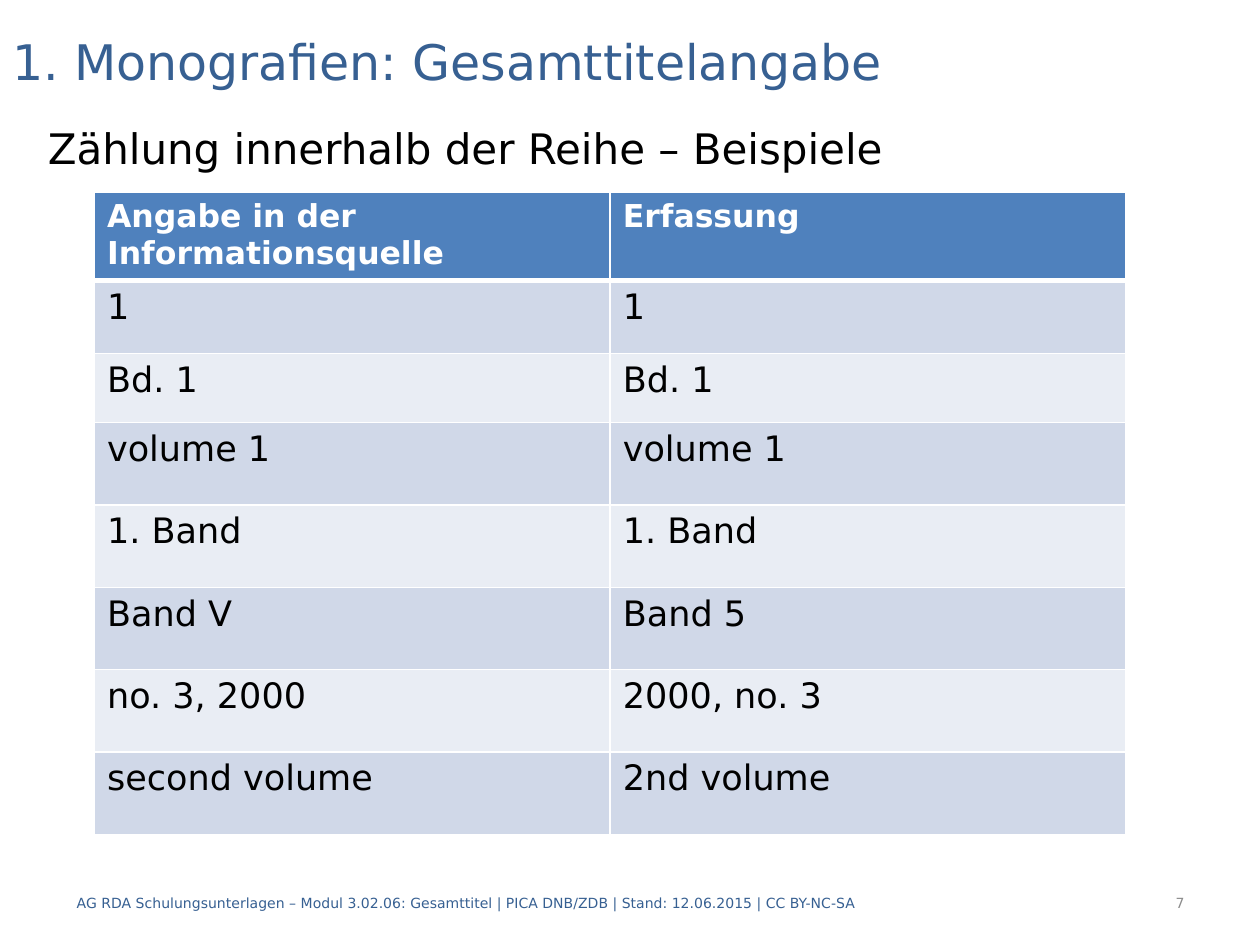
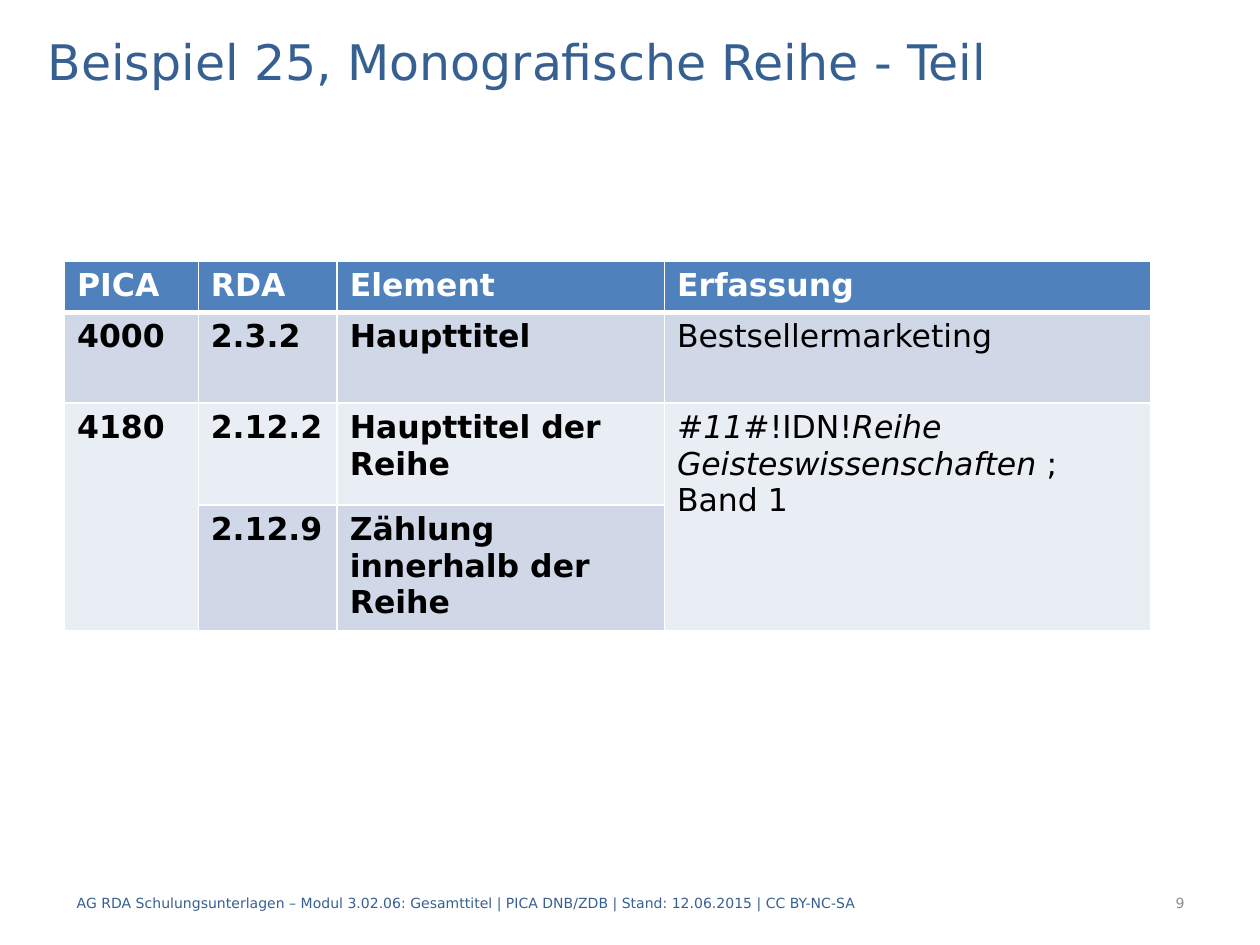
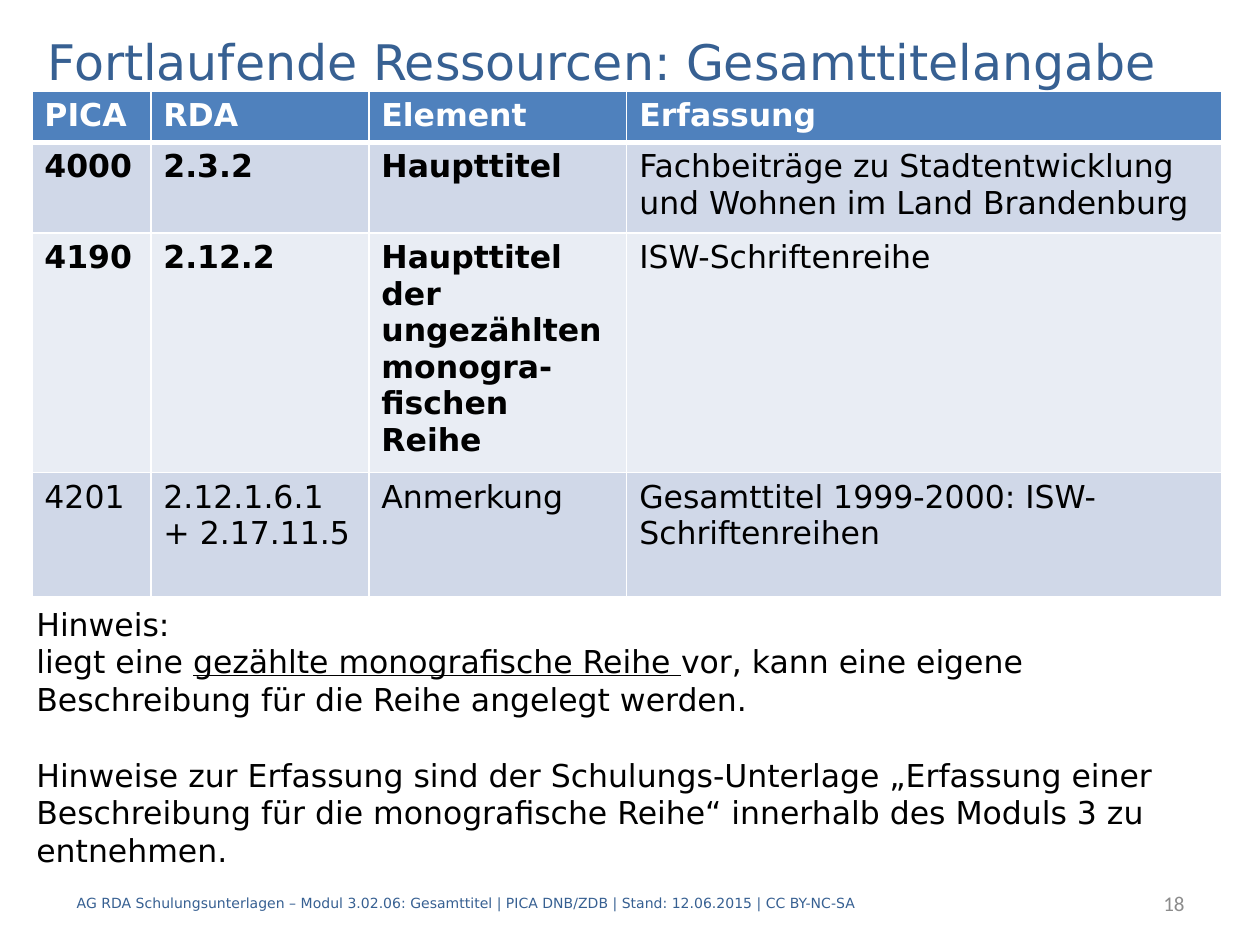
from lxml import etree
from pptx import Presentation
from pptx.dml.color import RGBColor
from pptx.enum import text as txt
from pptx.oxml import ns
from pptx.util import Pt

# Shared look
FONT = "DejaVu Sans"
NAVY = RGBColor(0x37, 0x60, 0x92)
BLUE = RGBColor(0x4F, 0x81, 0xBD)
BANDS = RGBColor(0xD0, 0xD8, 0xE8), RGBColor(0xE9, 0xED, 0xF4)
GRAY = RGBColor(0x8C, 0x8C, 0x8C)
BLACK = RGBColor(0, 0, 0)
WHITE = RGBColor(255, 255, 255)
MID = txt.MSO_ANCHOR.MIDDLE
RIGHT = txt.PP_ALIGN.RIGHT
FOOTER = ("AG RDA Schulungsunterlagen – Modul 3.02.06: Gesamttitel | "
          "PICA DNB/ZDB | Stand: 12.06.2015 | CC BY-NC-SA")

# Content: a text is a string or a list of paragraphs, a paragraph is a list
# of runs, a run is a string or (string, style letter).
# A table row is (number of bold cells, cells); None continues the cell above.
HEAD = (4, ["PICA", "RDA", "Element", "Erfassung"])
SERIES = [["#", ("11", "i"), "#!IDN!", ("Reihe Geisteswissenschaften ", "i"), ";"],
          ["Band 1"]]
NOTE = [
    ["Hinweis:"],
    ["liegt eine ", ("gezählte monografische Reihe ", "u"),
     "vor, kann eine eigene Beschreibung für die Reihe angelegt werden."],
    ["Hinweise zur Erfassung sind der Schulungs-Unterlage „Erfassung einer "
     "Beschreibung für die monografische Reihe“ innerhalb des Moduls 3 zu "
     "entnehmen."],
]
SLIDES = [
    dict(title="1. Monografien: Gesamttitelangabe", left=0, num="7",
         body="Zählung innerhalb der Reihe – Beispiele",
         at=(54, 110), cols=[294.7] * 2, size=20,
         highs=[47, 41.5, 39.5] + [47.1] * 5,
         rows=[(2, ["Angabe in der Informationsquelle", "Erfassung"]),
               (0, ["1", "1"]),
               (0, ["Bd. 1", "Bd. 1"]),
               (0, ["volume 1", "volume 1"]),
               (0, ["1. Band", "1. Band"]),
               (0, ["Band V", "Band 5"]),
               (0, ["no. 3, 2000", "2000, no. 3"]),
               (0, ["second volume", "2nd volume"])]),
    dict(title="Beispiel 25, Monografische Reihe - Teil", num="9",
         at=(36.9, 149.3), cols=[76.4, 79.4, 187, 277.7],
         highs=[29.2, 51.8, 58.3, 69.8],
         rows=[HEAD,
               (3, ["4000", "2.3.2", "Haupttitel", "Bestsellermarketing"]),
               (3, ["4180", "2.12.2", "Haupttitel der Reihe", SERIES]),
               (3, [None, "2.12.9", "Zählung innerhalb der Reihe", None])]),
    dict(title="Fortlaufende Ressourcen: Gesamttitelangabe", num="18",
         form=dict(size=12, font="Calibri"), note=NOTE,
         at=(18.2, 52.2), cols=[68, 124.6, 147.4, 340],
         highs=[29.2, 51.8, 132.4, 70.8],
         rows=[HEAD,
               (3, ["4000", "2.3.2", "Haupttitel",
                    "Fachbeiträge zu Stadtentwicklung und Wohnen im Land Brandenburg"]),
               (3, ["4190", "2.12.2",
                    "Haupttitel der ungezählten monogra-fischen Reihe",
                    "ISW-Schriftenreihe"]),
               (0, ["4201", "2.12.1.6.1 + 2.17.11.5", "Anmerkung",
                    "Gesamttitel 1999-2000: ISW-Schriftenreihen"])]),
]


def write(frame, words, size=18, color=BLACK, font=FONT, bold=False, align=None):
    """Fill a text frame and return its paragraphs."""
    frame.word_wrap = True
    paras = [[words]] if isinstance(words, str) else words
    for n, runs in enumerate(paras):
        para = frame.add_paragraph() if n else frame.paragraphs[0]
        para.alignment = align
        for part in runs:
            word, style = (part, "") if isinstance(part, str) else part
            run = para.add_run()
            run.text = word
            face = run.font
            face.name, face.size, face.bold = font, Pt(size), bold
            face.italic, face.underline = style == "i", style == "u"
            face.color.rgb = color
    return frame.paragraphs


def box(slide, at, words, anchor=txt.MSO_ANCHOR.TOP, **form):
    frame = slide.shapes.add_textbox(*map(Pt, at)).text_frame
    frame.vertical_anchor = anchor
    return write(frame, words, **form)


def edge(cell, row):
    """White cell borders, thick below the header row."""
    props = cell._tc.get_or_add_tcPr()
    wide = {"T": 3 if row == 1 else 1, "B": 3 if row == 0 else 1}
    for n, side in enumerate("LRTB"):
        line = etree.Element(ns.qn("a:ln" + side), w=str(Pt(wide.get(side, 1))))
        fill = etree.SubElement(line, ns.qn("a:solidFill"))
        etree.SubElement(fill, ns.qn("a:srgbClr"), val=str(WHITE))
        props.insert(n, line)


def grid(slide, at, cols, highs, rows, size=18):
    table = slide.shapes.add_table(len(rows), len(cols), *map(
        Pt, (*at, sum(cols), sum(highs)))).table
    for col, wide in zip(table.columns, cols):
        col.width = Pt(wide)
    for r, (bolds, cells) in enumerate(rows):
        table.rows[r].height = Pt(highs[r])
        for c, words in enumerate(cells):
            cell = table.cell(r, c)
            edge(cell, r)
            cell.fill.solid()
            cell.fill.fore_color.rgb = BANDS[(r - 1) % 2] if r else BLUE
            if words is None:
                table.cell(r - 1, c).merge(cell)
            else:
                write(cell.text_frame, words, size=size if r else 18,
                      color=BLACK if r else WHITE, bold=c < bolds)


def build(deck, data):
    slide = deck.slides.add_slide(deck.slide_layouts[6])
    # Title and body line
    left = data.get("left", 20.2)
    box(slide, (left, 14.4, 700 - left, 40.3), data["title"], MID,
        size=28, color=NAVY)
    if "body" in data:
        box(slide, (20.2, 66.2, 680.4, 40), data["body"], size=24)
    # Footer and page number
    box(slide, (36.7, 501.8, 527, 28.8), FOOTER, MID, size=8, color=NAVY)
    box(slide, (569.5, 501.8, 114.5, 28.8), data["num"], MID, color=GRAY,
        align=RIGHT, **data.get("form", dict(size=8)))
    # Table and note below it
    grid(slide, data["at"], data["cols"], data["highs"], data["rows"],
         data.get("size", 18))
    if "note" in data:
        paras = box(slide, (13.7, 342, 668.9, 160), data["note"])
        paras[-1].space_before = Pt(21.5)


def main():
    deck = Presentation()
    deck.slide_width, deck.slide_height = Pt(720), Pt(540)
    for data in SLIDES:
        build(deck, data)
    deck.save("out.pptx")


if __name__ == "__main__":
    main()
